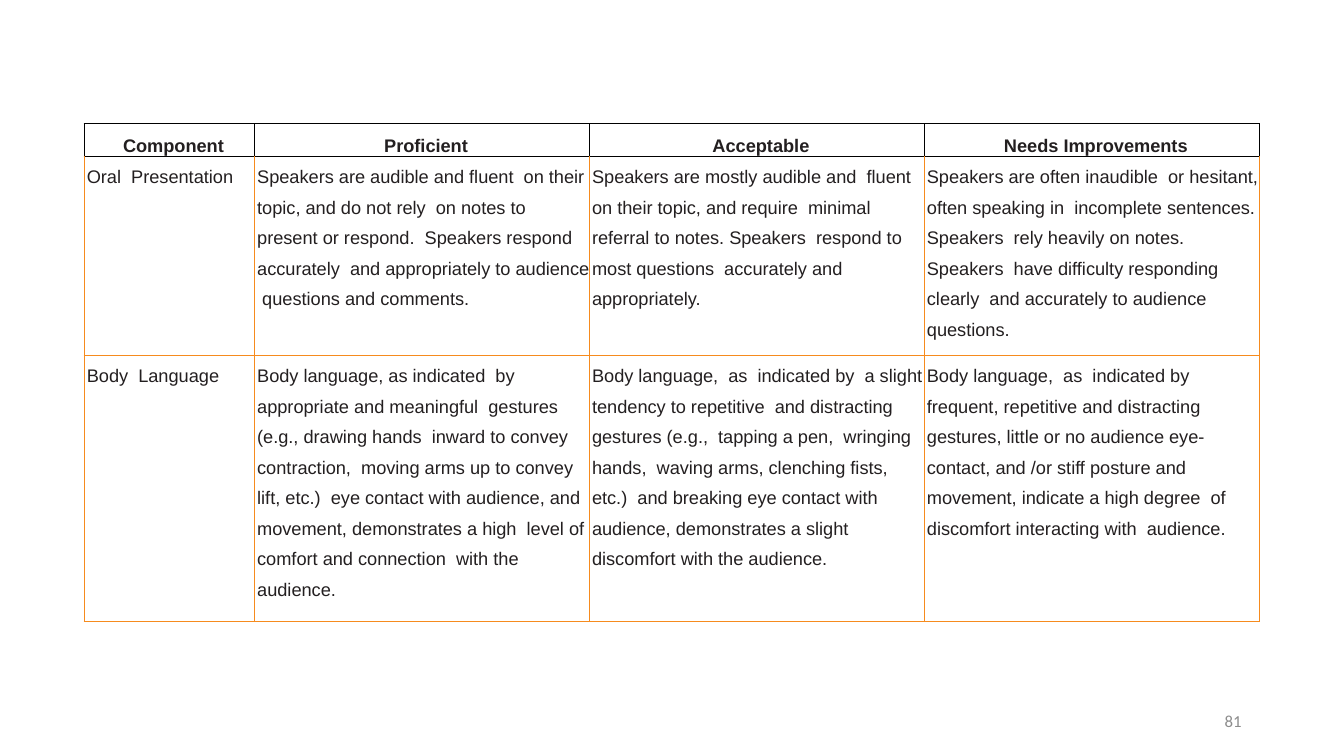
import dataclasses

import lxml.etree
import pptx
import pptx.dml.color
import pptx.enum.text
import pptx.oxml.ns
import pptx.util

Pt = pptx.util.Pt
ALIGN = pptx.enum.text.PP_ALIGN
ANCHOR = pptx.enum.text.MSO_ANCHOR


@dataclasses.dataclass(frozen=True)
class Theme:
    text: str = "231F20"
    number: str = "8C8C8C"
    header_line: str = "000000"
    body_line: str = "F68B1E"
    table_font: str = "Arial"
    number_font: str = "Calibri"
    table_size: int = 13
    number_size: int = 12


THEME = Theme()

COLUMN_WIDTHS = [121.7] + [239.2] * 3
ROW_HEIGHTS = [22.5, 142, 190]
RUBRIC = [
    ["Component", "Proficient", "Acceptable", "Needs Improvements"],
    [
        "Oral  Presentation",
        "Speakers are audible and fluent  on their topic, and do not rely  on notes to "
        "present or respond.  Speakers respond accurately  and appropriately to audience  "
        "questions and comments.",
        "Speakers are mostly audible and  fluent on their topic, and require  minimal "
        "referral to notes. Speakers  respond to most questions  accurately and "
        "appropriately.",
        "Speakers are often inaudible  or hesitant, often speaking in  incomplete "
        "sentences. Speakers  rely heavily on notes. Speakers  have difficulty responding "
        "clearly  and accurately to audience  questions.",
    ],
    [
        "Body  Language",
        "Body language, as indicated  by appropriate and meaningful  gestures (e.g., "
        "drawing hands  inward to convey contraction,  moving arms up to convey lift, "
        "etc.)  eye contact with audience, and  movement, demonstrates a high  level of "
        "comfort and connection  with the audience.",
        "Body language,  as  indicated by  a slight tendency to repetitive  and "
        "distracting gestures (e.g.,  tapping a pen,  wringing hands,  waving arms, "
        "clenching fists, etc.)  and breaking eye contact with  audience, demonstrates a "
        "slight  discomfort with the audience.",
        "Body language,  as  indicated by  frequent, repetitive and distracting  "
        "gestures, little or no audience eye-  contact, and /or stiff posture and  "
        "movement, indicate a high degree  of discomfort interacting with  audience.",
    ],
]


def set_values(target, values):
    for name, value in values.items():
        setattr(target, name, value)


def write(para, text, color, **font):
    span = para.add_run()
    span.text = text
    set_values(span.font, font)
    span.font.color.rgb = pptx.dml.color.RGBColor.from_string(color)


def draw_borders(cell, colors, width=0.75):
    """Draw cell edges; colors maps L, R, T and B to a colour."""
    properties = cell._tc.get_or_add_tcPr()
    qn = pptx.oxml.ns.qn
    for side, color in colors.items():
        line = lxml.etree.SubElement(properties, qn(f"a:ln{side}"), w=str(Pt(width)))
        fill = lxml.etree.SubElement(line, qn("a:solidFill"))
        lxml.etree.SubElement(fill, qn("a:srgbClr"), val=color)


def fill_cell(cell, text, is_header, borders):
    set_values(cell, {
        "margin_left": 0,
        "margin_right": 0,
        "margin_top": Pt(1.4 if is_header else 0.7),
        "margin_bottom": 0,
        "vertical_anchor": ANCHOR.MIDDLE if is_header else ANCHOR.TOP,
    })
    draw_borders(cell, borders)
    cell.fill.background()
    para = cell.text_frame.paragraphs[0]
    para.alignment = ALIGN.CENTER if is_header else ALIGN.LEFT
    para.line_spacing = 1.5
    para._p.get_or_add_pPr().set("marL", str(Pt(6 if is_header else 2)))
    write(para, text, THEME.text, name=THEME.table_font,
          size=Pt(THEME.table_size), bold=is_header)


def add_rubric(page):
    frame = page.shapes.add_table(
        len(ROW_HEIGHTS), len(COLUMN_WIDTHS), Pt(60), Pt(88.5),
        Pt(sum(COLUMN_WIDTHS)), Pt(sum(ROW_HEIGHTS)))
    table = frame.table
    set_values(table, {"first_row": False, "horz_banding": False})
    for column, width in zip(table.columns, COLUMN_WIDTHS):
        column.width = Pt(width)
    for row_index, (row, height) in enumerate(zip(table.rows, ROW_HEIGHTS)):
        row.height = Pt(height)
        is_header = row_index == 0
        borders = dict.fromkeys("LRTB", THEME.header_line if is_header else THEME.body_line)
        if row_index == 1:
            borders["T"] = THEME.header_line
        for cell, text in zip(row.cells, RUBRIC[row_index]):
            fill_cell(cell, text, is_header, borders)


def add_page_number(page, number):
    box = page.shapes.add_textbox(Pt(678), Pt(500.5), Pt(216), Pt(28.75))
    set_values(box.text_frame, {"word_wrap": True, "vertical_anchor": ANCHOR.MIDDLE})
    para = box.text_frame.paragraphs[0]
    para.alignment = ALIGN.RIGHT
    write(para, number, THEME.number, name=THEME.number_font, size=Pt(THEME.number_size))


def main():
    deck = pptx.Presentation()
    set_values(deck, {"slide_width": Pt(960), "slide_height": Pt(540)})
    page = deck.slides.add_slide(deck.slide_layouts[6])
    add_rubric(page)
    add_page_number(page, "81")
    deck.save("out.pptx")


if __name__ == "__main__":
    main()
